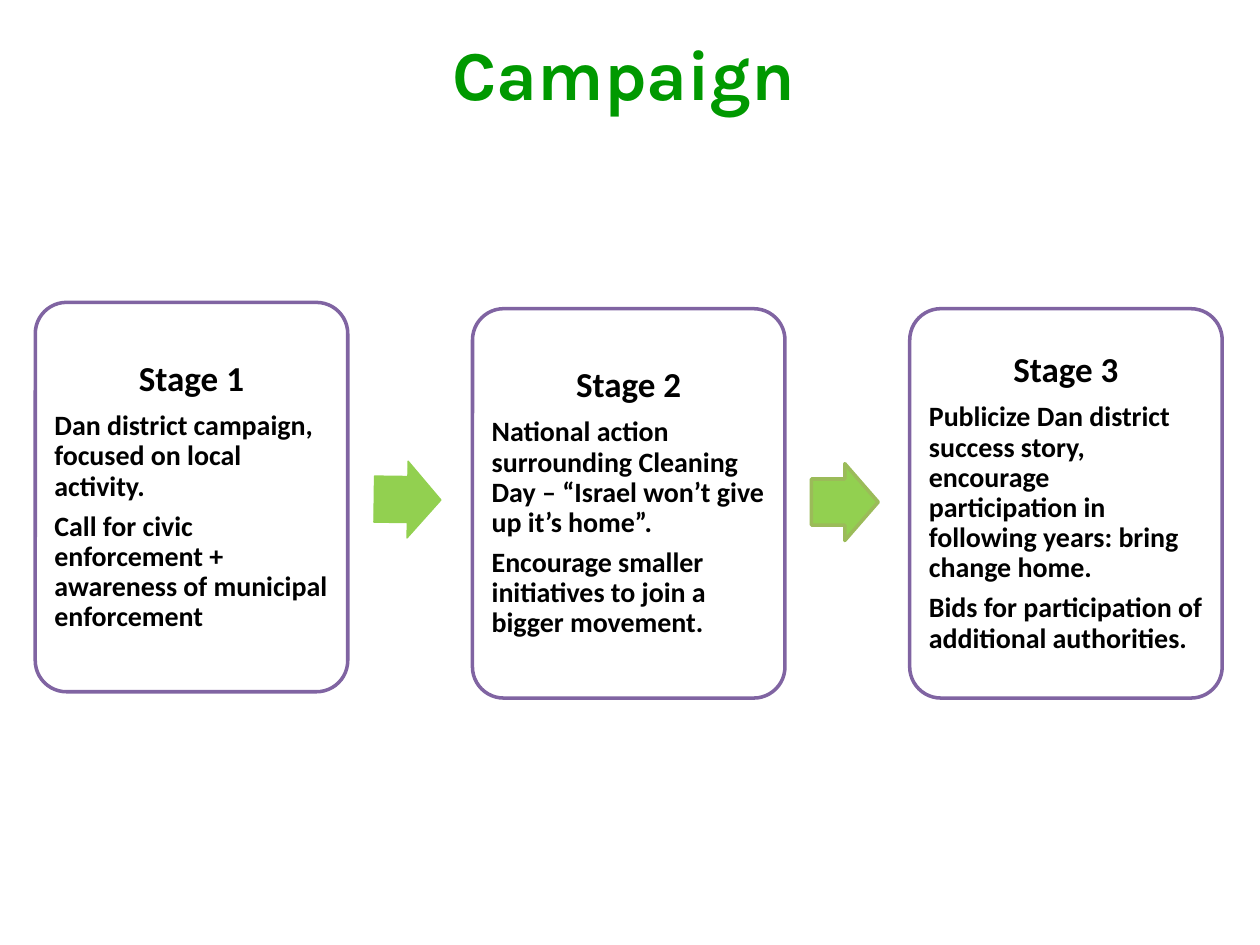
from pptx import Presentation
from pptx import util as u
from pptx.dml.color import RGBColor
from pptx.enum import shapes, text

WIDTH, HEIGHT = 10, 7.5
COLUMN = 3.47  # distance from one stage to the next
LEFT = 0.28
CARD_WIDTH, CARD_HEIGHT = 2.48, 3.09
ARROW_WIDTH, ARROW_HEIGHT = 0.53, 0.61


def color(value):
    return RGBColor.from_string(value)


class Flow:
    """Holds the style and the slide, and draws the stages on it."""

    title_font, body_font = "Karla", "Calibri"
    green, lime, olive = "009900", "92D050", "9BBB59"
    purple, white, black = "8064A2", "FFFFFF", "000000"

    def __init__(self, page):
        self.page = page

    def style(self, para, font, size, ink):
        for span in para.runs:
            span.font.name = font
            span.font.size = u.Pt(size)
            span.font.bold = True
            span.font.color.rgb = color(ink)

    def title(self, words):
        box = self.page.shapes.title
        box.left, box.top = u.Inches(0.45), u.Inches(0.13)
        box.width, box.height = u.Inches(9), u.Inches(1.25)
        frame = box.text_frame
        frame.text = words
        frame.auto_size = text.MSO_AUTO_SIZE.NONE
        frame.vertical_anchor = text.MSO_ANCHOR.TOP
        frame.margin_top = u.Inches(0.11)
        frame.paragraphs[0].alignment = text.PP_ALIGN.CENTER
        self.style(frame.paragraphs[0], self.title_font, 40, self.green)

    def shape(self, kind, place, fill, line, weight, adjustments):
        box = self.page.shapes.add_shape(kind, *map(u.Inches, place))
        box.shadow.inherit = False
        box.fill.solid()
        box.fill.fore_color.rgb = color(fill)
        box.line.color.rgb = color(line)
        box.line.width = u.Pt(weight)
        for index, value in enumerate(adjustments):
            box.adjustments[index] = value
        return box

    def card(self, column, top, heading, details):
        place = (LEFT + column * COLUMN, top, CARD_WIDTH, CARD_HEIGHT)
        box = self.shape(shapes.MSO_SHAPE.ROUNDED_RECTANGLE, place,
                         self.white, self.purple, 2, [0.1])
        frame = box.text_frame
        frame.word_wrap = True
        frame.vertical_anchor = text.MSO_ANCHOR.MIDDLE
        frame.margin_left = frame.margin_right = u.Inches(0.08)
        frame.margin_top = frame.margin_bottom = u.Inches(0.08)
        frame.text = "\n".join([heading, *details])
        for index, para in enumerate(frame.paragraphs):
            size = 16 if index else 20
            para.alignment = text.PP_ALIGN.LEFT if index else text.PP_ALIGN.CENTER
            para.line_spacing = 0.9
            para.space_after = u.Pt(size * 0.35)
            self.style(para, self.body_font, size, self.black)

    def arrow(self, column, top, line, weight, rotation):
        place = (LEFT + column * COLUMN + CARD_WIDTH + 0.21, top,
                 ARROW_WIDTH, ARROW_HEIGHT)
        box = self.shape(shapes.MSO_SHAPE.RIGHT_ARROW, place,
                         self.lime, line, weight, [0.6, 0.5])
        box.rotation = rotation


STAGES = [
    (2.4, "Stage 1", [
        "Dan district campaign, focused on local activity.",
        "Call for civic enforcement + awareness of municipal enforcement"]),
    (2.45, "Stage 2", [
        "National action surrounding Cleaning Day – “Israel won’t give up it’s home”.",
        "Encourage smaller initiatives to join a bigger movement."]),
    (2.45, "Stage 3", [
        "Publicize Dan district success story, encourage participation in "
        "following years: bring change home.",
        "Bids for participation of additional authorities."]),
]


def main():
    deck = Presentation()
    deck.slide_width, deck.slide_height = u.Inches(WIDTH), u.Inches(HEIGHT)
    flow = Flow(deck.slides.add_slide(deck.slide_layouts[5]))

    # Heading
    flow.title("Campaign")

    # Stages from left to right
    for column, (top, heading, details) in enumerate(STAGES):
        flow.card(column, top, heading, details)

    # Arrows between the stages
    flow.arrow(0, 3.66, flow.lime, 0.75, 0.8)
    flow.arrow(1, 3.68, flow.olive, 2, 0)

    deck.save("out.pptx")


if __name__ == "__main__":
    main()
